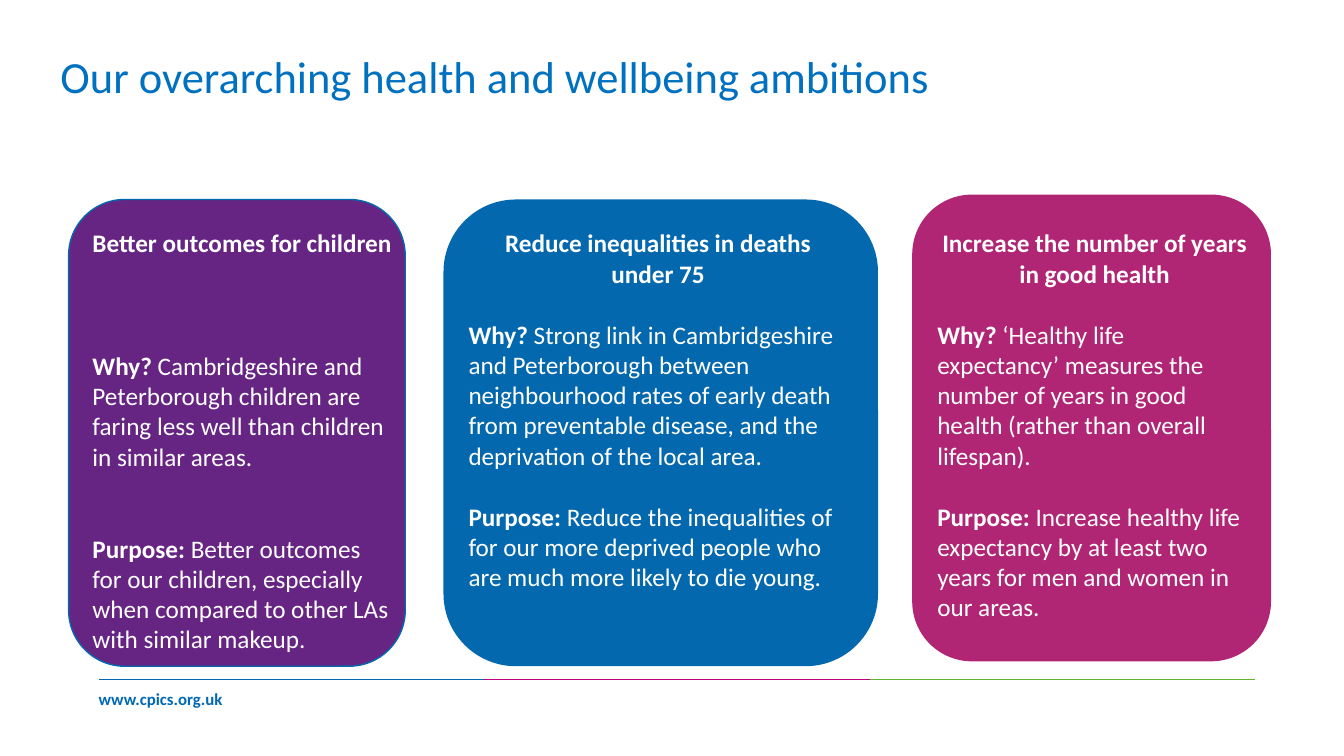
from pptx import Presentation
from pptx.dml.color import RGBColor
from pptx.enum.shapes import MSO_CONNECTOR as Connector, MSO_SHAPE as Shape
from pptx.enum.text import MSO_ANCHOR as Anchor, MSO_AUTO_SIZE as AutoSize, PP_ALIGN as Align
from pptx.oxml.ns import qn
from pptx.util import Pt
from lxml.etree import SubElement

WHITE = RGBColor(0xFF, 0xFF, 0xFF)
TITLE_BLUE = RGBColor(0x00, 0x70, 0xC0)
BRAND_BLUE = RGBColor(0x00, 0x69, 0xB3)
PANEL_BLUE = RGBColor(0x04, 0x68, 0xAE)
PURPLE = RGBColor(0x66, 0x24, 0x83)
MAGENTA = RGBColor(0xB0, 0x26, 0x75)
RULE_PINK = RGBColor(0xBF, 0x00, 0x78)
RULE_GREEN = RGBColor(0x65, 0xB3, 0x2E)

FONT = "Calibri"
LINE = 22
TEXT_TOP = 159.1

AMBITIONS = [
    {"box": (316.8, 142.5, 310.4, 333.4), "fill": PANEL_BLUE, "outline": None,
     "text": (327.6, 285.1), "align": Align.CENTER, "gaps": (1, 1),
     "heading": ["Reduce inequalities in deaths", "under 75"],
     "why": "Strong link in Cambridgeshire and Peterborough between neighbourhood rates of "
            "early death from preventable disease, and the deprivation of the local area.",
     "purpose": "Reduce the inequalities of for our more deprived people who are much more "
                "likely to die young."},
    {"box": (49, 142.5, 240.5, 333.4), "fill": PURPLE, "outline": PANEL_BLUE,
     "text": (59, 230.4), "align": Align.LEFT, "gaps": (3, 2),
     "heading": ["Better outcomes for children"],
     "why": "Cambridgeshire and Peterborough children are faring less well than children in "
            "similar areas.",
     "purpose": "Better outcomes for our children, especially when compared to other LAs with "
                "similar makeup."},
    {"box": (651.6, 139, 256.3, 333.4), "fill": MAGENTA, "outline": None,
     "text": (662.4, 239), "align": Align.CENTER, "gaps": (1, 1),
     "heading": ["Increase the number of years", "in good health"],
     "why": "‘Healthy life expectancy’ measures the number of years in good health (rather "
            "than overall lifespan).",
     "purpose": "Increase healthy life expectancy by at least two years for men and women in "
                "our areas."},
]


def apply(target, formats):
    for name, value in formats.items():
        setattr(target, name, value)


def add_run(paragraph, text, size, color, bold=False):
    run = paragraph.add_run()
    run.text = text
    apply(run.font, {"name": FONT, "size": Pt(size), "bold": bold})
    run.font.color.rgb = color


def add_title(slide, box):
    title = slide.shapes.title
    apply(title, dict(zip(("left", "top", "width", "height"), map(Pt, box))))
    apply(title.text_frame, {"vertical_anchor": Anchor.TOP, "auto_size": AutoSize.NONE,
                             "word_wrap": True, "margin_top": Pt(6)})
    heading = title.text_frame.paragraphs[0]
    apply(heading, {"alignment": Align.LEFT, "line_spacing": 0.7, "space_after": Pt(6)})
    add_run(heading, "Our overarching health and wellbeing ambitions", 31.8, TITLE_BLUE)


def add_footer(slide, box):
    left, top, width, height = box
    segment = width / 3
    for index, color in enumerate((BRAND_BLUE, RULE_PINK, RULE_GREEN)):
        start = left + index * segment
        rule = slide.shapes.add_connector(
            Connector.STRAIGHT, Pt(start), Pt(top), Pt(start + segment), Pt(top))
        rule.line.color.rgb = color
        rule.line.width = Pt(1.25)
        SubElement(rule._element.spPr, qn("a:effectLst"))
    address = slide.shapes.add_textbox(Pt(left - 7.2), Pt(top + 2.9), Pt(230.4), Pt(height))
    address.text_frame.word_wrap = True
    add_run(address.text_frame.paragraphs[0], "www.cpics.org.uk", 12, BRAND_BLUE, True)


def add_ambition(slide, ambition):
    left, top, width, height = ambition["box"]
    panel = slide.shapes.add_shape(
        Shape.ROUNDED_RECTANGLE, Pt(left), Pt(top), Pt(width), Pt(height))
    panel.shadow.inherit = False
    panel.fill.solid()
    panel.fill.fore_color.rgb = ambition["fill"]
    if ambition["outline"] is None:
        panel.line.fill.background()
    else:
        panel.line.color.rgb = ambition["outline"]
        panel.line.width = Pt(1)

    text_left, text_width = ambition["text"]
    message = slide.shapes.add_textbox(
        Pt(text_left), Pt(TEXT_TOP), Pt(text_width), Pt(top + height - TEXT_TOP))
    frame = message.text_frame
    frame.word_wrap = True
    for index, wording in enumerate(ambition["heading"]):
        heading = frame.add_paragraph() if index else frame.paragraphs[0]
        heading.alignment = ambition["align"]
        add_run(heading, wording, 18, WHITE, True)
    points = (("Why? ", ambition["why"]), ("Purpose: ", ambition["purpose"]))
    for (label, wording), gap in zip(points, ambition["gaps"]):
        point = frame.add_paragraph()
        apply(point, {"alignment": Align.LEFT, "space_before": Pt(gap * LINE)})
        add_run(point, label, 18, WHITE, True)
        add_run(point, wording, 18, WHITE)


def main():
    deck = Presentation()
    apply(deck, {"slide_width": Pt(960), "slide_height": Pt(540)})
    slide = deck.slides.add_slide(deck.slide_layouts[5])
    add_footer(slide, (70.6, 485.3, 825.8, 21.6))
    add_title(slide, (36, 39.6, 657.4, 73.4))
    for ambition in AMBITIONS:
        add_ambition(slide, ambition)
    deck.save("out.pptx")


if __name__ == "__main__":
    main()
